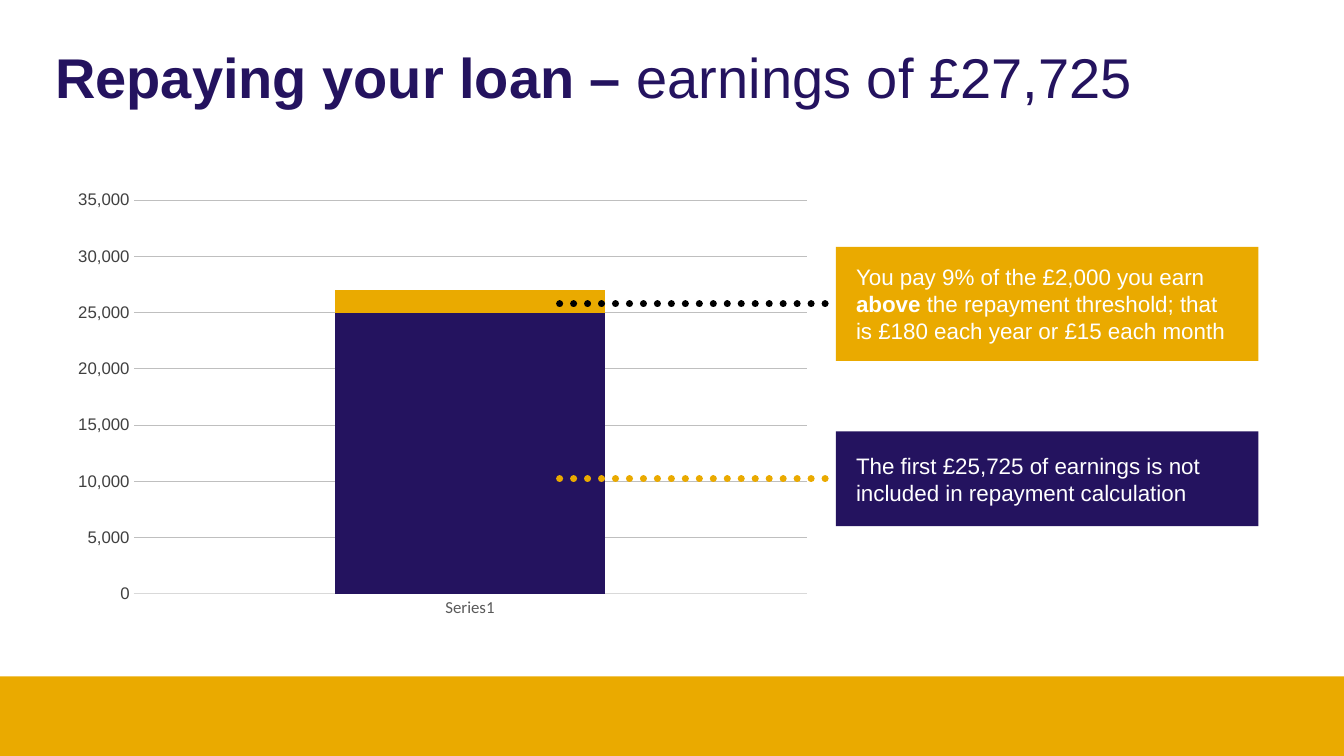
from dataclasses import dataclass

from lxml.etree import SubElement
from pptx import Presentation
from pptx.chart.data import CategoryChartData as Data
from pptx.dml.color import RGBColor as Rgb
from pptx.enum.chart import XL_CHART_TYPE as Kind, XL_TICK_MARK as Tick
from pptx.enum.dml import MSO_LINE as Dash
from pptx.enum.shapes import MSO_CONNECTOR as Link, MSO_SHAPE as Form
from pptx.enum.text import MSO_ANCHOR as Anchor, MSO_AUTO_SIZE as Fit, PP_ALIGN as Align
from pptx.oxml import parse_xml
from pptx.oxml.ns import nsdecls, qn
from pptx.shapes.autoshape import Shape
from pptx.slide import Slide
from pptx.text.text import Font, TextFrame
from pptx.util import Inches, Pt


@dataclass(frozen=True)
class Theme:
    navy: str = "24135F"
    gold: str = "EAAA00"
    white: str = "FFFFFF"
    black: str = "000000"
    grid: str = "BFBFBF"
    base: str = "D9D9D9"
    value: str = "404040"
    label: str = "595959"
    sans: str = "Arial"
    plain: str = "Calibri"
    title: int = 40
    body: int = 16
    tick: int = 12
    small: int = 10


@dataclass(frozen=True)
class Words:
    text: str
    bold: bool = False


@dataclass(frozen=True)
class Band:
    name: str
    value: int
    color: str


@dataclass(frozen=True)
class Note:
    top: float
    height: float
    pad: float
    fill: str
    dots: str
    words: tuple[Words, ...]


THEME = Theme()
WIDTH, HEIGHT = 13.33, 7.5
TITLE = (Words("Repaying your loan – ", True), Words("earnings of £27,725"))
BANDS = (Band("Series 1", 25000, THEME.navy), Band("Series 2", 2000, THEME.gold))
NOTES = (
    Note(2.45, 1.13, 0.16, THEME.gold, THEME.black, (
        Words("You pay 9% of the £2,000 you earn "),
        Words("above", True),
        Words(" the repayment threshold; that is £180 each year or £15 each month"),
    )),
    Note(4.28, 0.94, 0.2, THEME.navy, THEME.gold, (
        Words("The first £25,725 of earnings is not included in repayment calculation"),
    )),
)
NOTE_LEFT, NOTE_WIDTH, DOTS_LEFT = 8.29, 4.19, 5.55


def style(font: Font, face: str, size: int, color: str) -> None:
    font.name = face
    font.size = Pt(size)
    font.color.rgb = Rgb.from_string(color)


def write(frame: TextFrame, words: tuple[Words, ...], size: int, color: str) -> None:
    frame.word_wrap = True
    frame.vertical_anchor = Anchor.MIDDLE
    para = frame.paragraphs[0]
    para.alignment = Align.LEFT
    style(para.font, THEME.sans, size, color)
    for item in words:
        run = para.add_run()
        run.text = item.text
        run.font.bold = item.bold


def add_title(slide: Slide) -> None:
    box = slide.shapes.add_textbox(Inches(0.45), Inches(0.48), Inches(11.5), Inches(0.63))
    write(box.text_frame, TITLE, THEME.title, THEME.navy)
    box.text_frame.paragraphs[0].line_spacing = 0.9


def add_block(slide: Slide, left: float, top: float, width: float, height: float, fill: str) -> Shape:
    block = slide.shapes.add_shape(
        Form.RECTANGLE, Inches(left), Inches(top), Inches(width), Inches(height))
    block.shadow.inherit = False
    block.fill.solid()
    block.fill.fore_color.rgb = Rgb.from_string(fill)
    block.line.fill.background()
    return block


def add_note(slide: Slide, note: Note) -> None:
    mid = Inches(note.top + note.height / 2)
    dots = slide.shapes.add_connector(
        Link.STRAIGHT, Inches(DOTS_LEFT), mid, Inches(NOTE_LEFT), mid)
    dots.line.color.rgb = Rgb.from_string(note.dots)
    dots.line.width = Pt(5)
    dots.line.dash_style = Dash.ROUND_DOT
    props = dots._element.spPr
    props.find(qn("a:ln")).set("cap", "rnd")
    SubElement(props, qn("a:effectLst"))

    block = add_block(slide, NOTE_LEFT, note.top, NOTE_WIDTH, note.height, note.fill)
    frame = block.text_frame
    frame.margin_left = frame.margin_right = Inches(0.2)
    frame.margin_top = frame.margin_bottom = Inches(note.pad)
    write(frame, note.words, THEME.body, THEME.white)
    frame.auto_size = Fit.SHAPE_TO_FIT_TEXT
    dots.end_connect(block, 1)


def add_chart(slide: Slide) -> None:
    data = Data(number_format="#,##0")
    data.categories = ["Series1"]
    for band in BANDS:
        data.add_series(band.name, [band.value])
    chart = slide.shapes.add_chart(
        Kind.COLUMN_STACKED, Inches(0.65), Inches(1.81), Inches(7.5), Inches(4.39), data).chart
    chart.has_title = False
    chart.has_legend = False
    style(chart.font, THEME.plain, THEME.small, THEME.black)

    plot = chart.plots[0]
    plot.vary_by_categories = False
    plot.gap_width = 150
    plot.overlap = 100
    for band, bar in zip(BANDS, plot.series):
        bar.format.fill.solid()
        bar.format.fill.fore_color.rgb = Rgb.from_string(band.color)

    cats, vals = chart.category_axis, chart.value_axis
    for axis in (cats, vals):
        axis.major_tick_mark = axis.minor_tick_mark = Tick.NONE
    style(cats.tick_labels.font, THEME.plain, THEME.tick, THEME.label)
    style(vals.tick_labels.font, THEME.sans, THEME.tick, THEME.value)
    vals.minimum_scale, vals.maximum_scale, vals.major_unit = 0, 35000, 5000
    vals.tick_labels.number_format = "#,##0"
    vals.tick_labels.number_format_is_linked = False
    vals.format.line.fill.background()
    vals.has_major_gridlines = True
    for line, color in ((cats.format.line, THEME.base),
                        (vals.major_gridlines.format.line, THEME.grid)):
        line.color.rgb = Rgb.from_string(color)
        line.width = Pt(0.75)

    area = chart._chartSpace.chart.plotArea
    for old in area.findall(qn("c:layout")):
        area.remove(old)
    sizes = "".join(f'<c:{key} val="{val}"/>' for key, val in (
        ("layoutTarget", "inner"), ("xMode", "edge"), ("yMode", "edge"),
        ("x", 0.09), ("y", 0.04), ("w", 0.89), ("h", 0.89)))
    area.insert(0, parse_xml(
        f'<c:layout {nsdecls("c")}><c:manualLayout>{sizes}</c:manualLayout></c:layout>'))


def main() -> None:
    deck = Presentation()
    deck.slide_width, deck.slide_height = Inches(WIDTH), Inches(HEIGHT)
    slide = deck.slides.add_slide(deck.slide_layouts[6])
    add_title(slide)
    add_chart(slide)
    add_block(slide, 0, 6.71, WIDTH, 0.79, THEME.gold)
    for note in NOTES:
        add_note(slide, note)
    deck.save("out.pptx")


if __name__ == "__main__":
    main()
